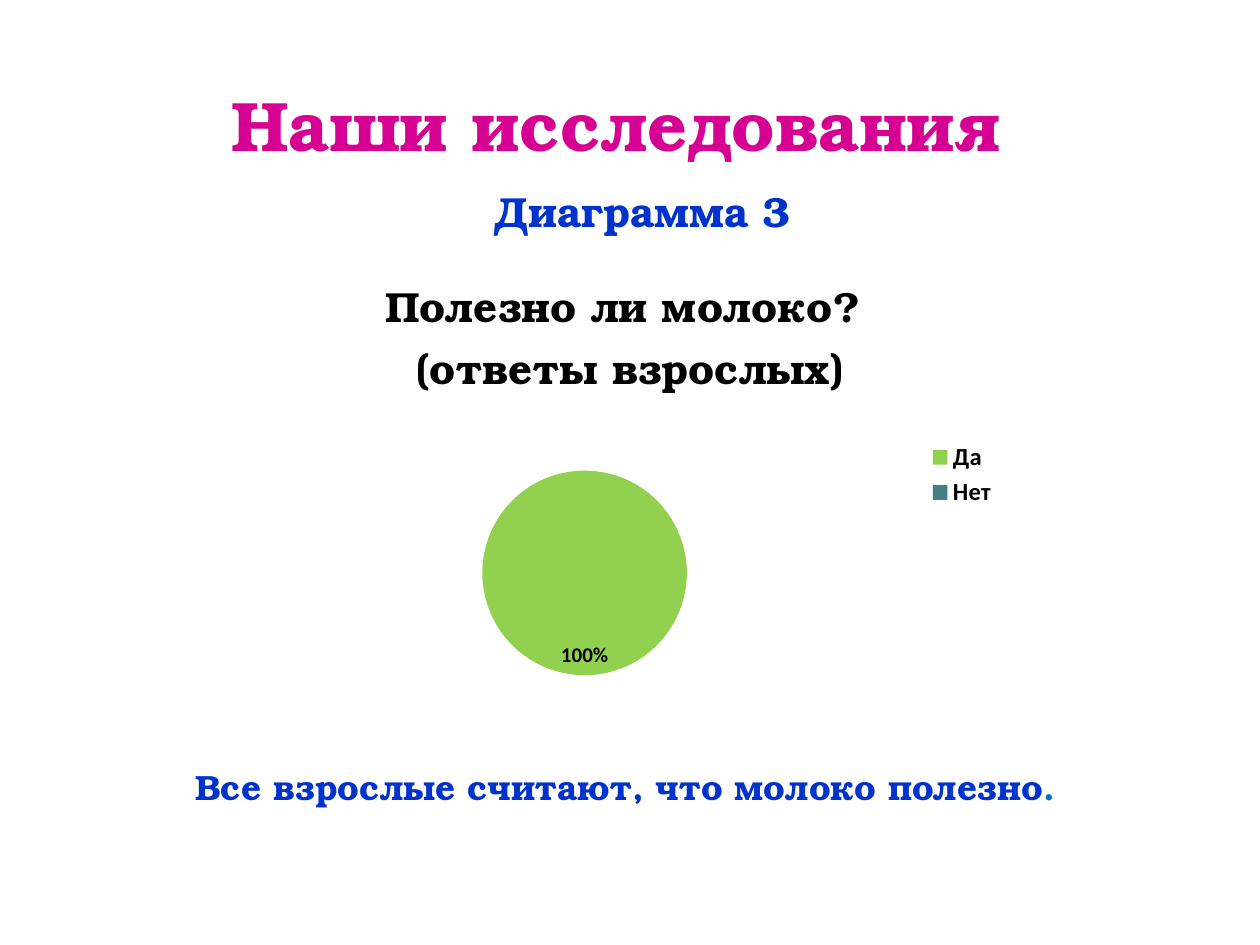
from lxml import etree
from pptx import Presentation
from pptx import util as u
from pptx.chart.data import CategoryChartData
from pptx.dml.color import RGBColor
from pptx.enum import chart as ch, text
from pptx.oxml.ns import qn


def color(value):
    return RGBColor.from_string(value)


class SlideBuilder:
    """Holds the style and the current slide, and adds its elements."""

    serif = "TeX Gyre Bonum"
    sans = "Calibri"
    pink, blue, sky, black = "D60093", "0033CC", "0070C0", "000000"
    slices = ("92D050", "438086")

    def __init__(self, prs):
        self.s = prs.slides.add_slide(prs.slide_layouts[6])

    def font(self, f, size, value, name, bold=True):
        f.size, f.bold, f.name = u.Pt(size), bold, name
        f.color.rgb = color(value)

    def text(self, box, size, runs, wrap=False):
        sp = self.s.shapes.add_textbox(*map(u.Inches, box))
        tf = sp.text_frame
        tf.word_wrap = wrap
        tf.auto_size = text.MSO_AUTO_SIZE.SHAPE_TO_FIT_TEXT
        p = tf.paragraphs[0]
        p.alignment = text.PP_ALIGN.CENTER
        for words, value in runs:
            r = p.add_run()
            r.text = words
            self.font(r.font, size, value, self.serif)

    def place(self, parent, index, **fractions):
        for old in parent.findall(qn("c:layout")):
            parent.remove(old)
        layout = etree.Element(qn("c:layout"))
        manual = etree.SubElement(layout, qn("c:manualLayout"))
        if "w" in fractions:
            etree.SubElement(manual, qn("c:layoutTarget"), val="inner")
        for axis in "xy":
            etree.SubElement(manual, qn(f"c:{axis}Mode"), val="edge")
        for key, value in fractions.items():
            etree.SubElement(manual, qn(f"c:{key}"), val=str(value))
        parent.insert(index, layout)

    def pie(self, box, title, answers, explosion):
        data = CategoryChartData(number_format="0%")
        data.categories = list(answers)
        data.add_series("Series 1", list(answers.values()))
        chart = self.s.shapes.add_chart(
            ch.XL_CHART_TYPE.PIE, *map(u.Inches, box), data).chart
        self.font(chart.font, 10, self.black, self.sans, False)
        self.chart_title(chart, title)

        chart.has_legend = True
        chart.legend.position = ch.XL_LEGEND_POSITION.RIGHT
        chart.legend.include_in_layout = False
        self.font(chart.legend.font, 14, self.black, self.sans)

        plot = chart.plots[0]
        plot.vary_by_categories = True
        series = plot.series[0]
        for i, value in enumerate(self.slices):
            fill = series.points[i].format.fill
            fill.solid()
            fill.fore_color.rgb = color(value)
        ser = series.points[0].format.fill and chart.element.find(".//" + qn("c:ser"))
        ser.find(qn("c:dPt")).addprevious(
            etree.Element(qn("c:explosion"), val=str(explosion)))

        labels = series.data_labels
        labels.show_value = True
        labels.number_format = "0%"
        labels.number_format_is_linked = False
        labels.position = ch.XL_LABEL_POSITION.INSIDE_END
        self.font(labels.font, 12, self.black, self.sans)
        for i, value in enumerate(answers.values()):
            if not value:
                hidden = etree.Element(qn("c:dLbl"))
                etree.SubElement(hidden, qn("c:idx"), val=str(i))
                etree.SubElement(hidden, qn("c:delete"), val="1")
                ser.find(qn("c:dLbls")).insert(0, hidden)

        self.place(chart.element.find(".//" + qn("c:plotArea")), 0,
                   x=0.27, y=0.38, w=0.34, h=0.58)
        self.place(chart.element.find(".//" + qn("c:legend")), 1, x=0.89, y=0.42)

    def chart_title(self, chart, lines):
        chart.has_title = True
        tf = chart.chart_title.text_frame
        for i, line in enumerate(lines):
            p = tf.add_paragraph() if i else tf.paragraphs[0]
            self.font(p.font, 24, self.black, self.serif)
            r = p.add_run()
            r.text = line
            self.font(r.font, 24, self.black, self.serif)


def main():
    prs = Presentation()
    prs.slide_width, prs.slide_height = u.Inches(10), u.Inches(7.5)
    b = SlideBuilder(prs)
    b.text((1.69, 0.6, 6.39, 0.77), 40, [("Наши исследования", b.pink)])
    b.text((3.68, 1.42, 2.84, 0.81), 24, [("Диаграмма 3", b.blue)])
    b.pie((2, 2, 6, 3.5), ("Полезно ли молоко? ", "(ответы взрослых)"),
          {"Да": 1, "Нет": 0}, 25)
    b.text((1.38, 6.03, 7.17, 0.44), 20,
           [("Все взрослые считают, что молоко полезно", b.blue), (".", b.sky)],
           wrap=True)
    prs.save("out.pptx")


if __name__ == "__main__":
    main()
